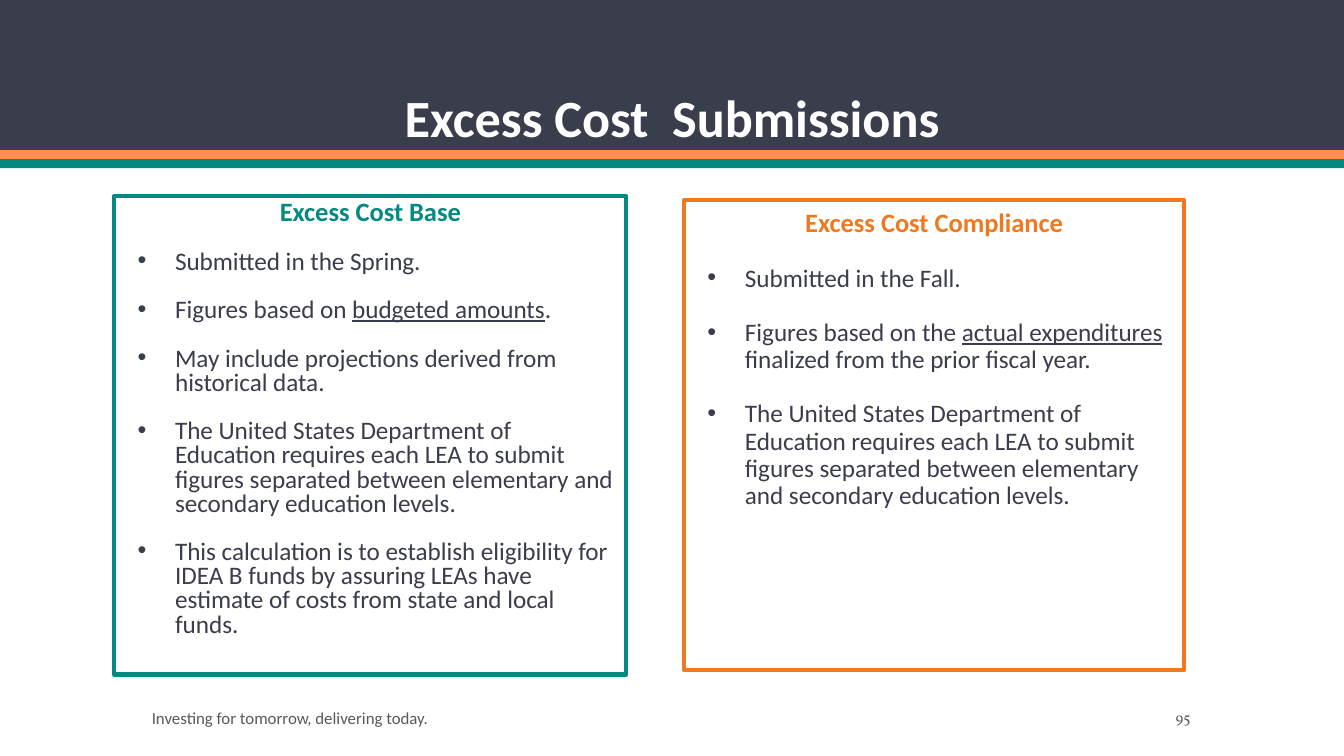
"""Build the slide that compares the two excess cost submissions."""
from lxml.etree import SubElement
from pptx import Presentation
from pptx.dml.color import RGBColor
from pptx.enum.shapes import MSO_SHAPE as Shape
from pptx.enum.text import MSO_ANCHOR as Anchor, PP_ALIGN as Align
from pptx.oxml.ns import qn
from pptx.util import Cm, Pt

DARK, ORANGE, TEAL = "3A3D4B", "FF914D", "048A81"
DEEP_ORANGE, GREY, WHITE = "EF7920", "595959", "FFFFFF"


def color(value):
    return RGBColor.from_string(value)


def write(paragraph, text, font_color, font_format, paragraph_format):
    for name, value in paragraph_format.items():
        setattr(paragraph, name, value)
    for index, part in enumerate(text.split("_")):
        run = paragraph.add_run()
        run.text = part
        run.font.color.rgb = color(font_color)
        for name, value in font_format.items():
            setattr(run.font, name, value)
        if index % 2:
            run.font.underline = True


presentation = Presentation()
presentation.slide_width, presentation.slide_height = Cm(25.4), Cm(14.29)
slide = presentation.slides.add_slide(presentation.slide_layouts[6])

bands = [(0, 2.84, DARK), (2.84, 0.17, ORANGE), (3.01, 0.17, TEAL)]
for top, height, fill in bands:
    band = slide.shapes.add_shape(Shape.RECTANGLE, 0, Cm(top), Cm(25.4), Cm(height))
    band.shadow.inherit = False
    band.fill.solid()
    band.fill.fore_color.rgb = color(fill)
    band.line.fill.background()

margins = {"margin_left": Cm(0.18), "margin_right": Cm(0.18), "word_wrap": True}

labels = [
    ("Excess Cost  Submissions", (2.69, 0.76, 20.02, 2.16), WHITE, Anchor.BOTTOM,
     {"name": "Calibri", "size": Pt(28), "bold": True},
     {"alignment": Align.CENTER, "line_spacing": 0.9}),
    ("Investing for tomorrow, delivering today.", (2.69, 13.28, 13, 0.58), GREY, Anchor.MIDDLE,
     {"name": "Calibri", "size": Pt(9)}, {"alignment": Align.LEFT}),
    ("95", (19.84, 13.28, 2.84, 0.58), GREY, Anchor.MIDDLE,
     {"name": "Vollkorn", "size": Pt(8)}, {"alignment": Align.RIGHT}),
]
for text, place, font_color, anchor, font_format, paragraph_format in labels:
    frame = slide.shapes.add_textbox(*map(Cm, place)).text_frame
    frame_format = {**margins, "margin_top": Cm(0.1), "margin_bottom": Cm(0.1),
                    "vertical_anchor": anchor}
    for name, value in frame_format.items():
        setattr(frame, name, value)
    write(frame.paragraphs[0], text, font_color, font_format, paragraph_format)

requirement = ("The United States Department of Education requires each LEA to submit "
               "figures separated between elementary and secondary education levels.")
panels = [
    ("Excess Cost Base", (2.16, 3.71, 9.68, 9.04), TEAL, 0.1, 0.8, [
        "Submitted in the Spring.",
        "Figures based on _budgeted amounts_.",
        "May include projections derived from historical data.",
        requirement,
        "This calculation is to establish eligibility for IDEA B funds by assuring "
        "LEAs have estimate of costs from state and local funds.",
    ]),
    ("Excess Cost Compliance", (12.93, 3.78, 9.45, 8.89), DEEP_ORANGE, 0.18, 0.9, [
        "Submitted in the Fall.",
        "Figures based on the _actual expenditures_ finalized from the prior fiscal year.",
        requirement,
    ]),
]
for heading, place, accent, inset, spacing, points in panels:
    panel = slide.shapes.add_shape(Shape.RECTANGLE, *map(Cm, place))
    panel.shadow.inherit = False
    panel.fill.background()
    panel.line.color.rgb = color(accent)
    panel.line.width = Pt(2.25)
    frame = panel.text_frame
    frame_format = {**margins, "margin_top": Cm(inset), "margin_bottom": Cm(inset),
                    "vertical_anchor": Anchor.TOP}
    for name, value in frame_format.items():
        setattr(frame, name, value)
    write(frame.paragraphs[0], heading, accent,
          {"name": "Calibri", "size": Pt(14.2), "bold": True},
          {"alignment": Align.CENTER, "line_spacing": spacing})
    for point in points:
        paragraph = frame.add_paragraph()
        write(paragraph, point, DARK, {"name": "Calibri", "size": Pt(13.5)},
              {"alignment": Align.LEFT, "line_spacing": spacing,
               "space_before": Pt(16.2 * spacing)})
        properties = paragraph._p.get_or_add_pPr()
        properties.set("marL", str(Cm(0.97)))
        properties.set("indent", str(Cm(-0.71)))
        bullet_color = SubElement(properties, qn("a:buClr"))
        SubElement(bullet_color, qn("a:srgbClr"), val=DARK)
        SubElement(properties, qn("a:buFont"), typeface="Arial")
        SubElement(properties, qn("a:buChar"), char="•")

presentation.save("out.pptx")
